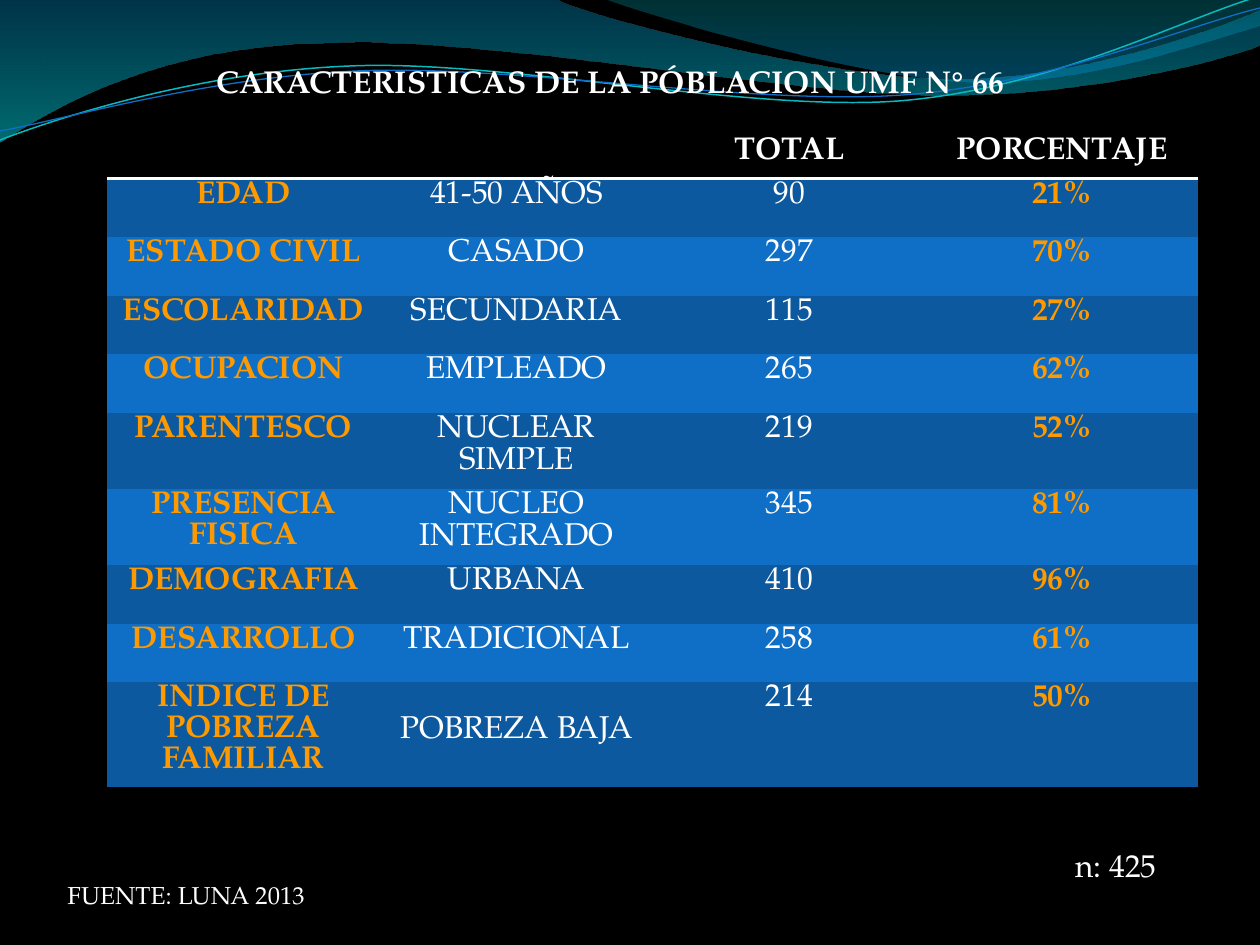
from lxml import etree
from pptx import Presentation
from pptx.dml.color import RGBColor
from pptx.enum.text import PP_ALIGN
from pptx.oxml import parse_xml
from pptx.oxml.ns import nsdecls, qn
from pptx.util import Emu, Pt

CENTER, LEFT = PP_ALIGN.CENTER, PP_ALIGN.LEFT
PX = 914400 / 126
FONT = "TeX Gyre Pagella"
NO_STYLE = "{2D5ABB26-0587-4C30-8999-92F81FD0307C}"
BLACK = RGBColor(0x00, 0x00, 0x00)
WHITE = RGBColor(0xFF, 0xFF, 0xFF)
ORANGE = RGBColor(0xFF, 0x99, 0x00)
BLUE = RGBColor(0x0F, 0x6F, 0xC6)
DARK_BLUE = RGBColor(0x0C, 0x59, 0x9F)
CYAN = RGBColor(0x0A, 0xB8, 0xBF)
OCEAN = RGBColor(0x00, 0x74, 0xA1)
AQUA = RGBColor(0x00, 0xC6, 0xCF)
TEAL = RGBColor(0x00, 0xA1, 0xA9)
AZURE = RGBColor(0x00, 0x8B, 0xBF)


def draw_wave(s, start, segments, close):
    fb = s.shapes.build_freeform(*start, PX)
    fb.add_line_segments([point for seg in segments for point in seg], close=close)
    sp = fb.convert_to_shape()
    sp.shadow.inherit = False
    lines = iter(list(sp._element.iter(qn("a:lnTo"))))
    for seg in segments:
        first = next(lines)
        if len(seg) == 3:
            first.tag = qn("a:cubicBezTo")
            for _ in range(2):
                line = next(lines)
                first.append(line[0])
                line.getparent().remove(line)
    return sp


def write(tf, text, align, fmt):
    p = tf.paragraphs[0]
    p.alignment = align
    r = p.add_run()
    r.text = text
    r.font.name = FONT
    r.font.color.rgb = fmt["color"]
    for name in ("size", "bold"):
        setattr(r.font, name, fmt[name])


prs = Presentation()
prs.slide_width, prs.slide_height = Emu(round(1260 * PX)), Emu(round(945 * PX))
s = prs.slides.add_slide(prs.slide_layouts[6])
s.background.fill.solid()
s.background.fill.fore_color.rgb = BLACK

bands = [
    ((0, 0), [
        ((554, -1),),
        ((600, 21), (837, 79), (955, 79)),
        ((1075, 79), (1207, 33), (1260, 11)),
        ((1261, 45),),
        ((1239, 55), (1096, 96), (940, 95)),
        ((784, 95), (481, 35), (324, 43)),
        ((163, 45), (58, 105), (-1, 142)),
    ], [(0, OCEAN, 45), (1, AQUA, 55)]),
    ((604, -1), [
        ((641, 14), (859, 78), (969, 82)),
        ((1079, 87), (1211, 40), (1260, 26)),
        ((1260, 0),),
    ], [(0, TEAL, 30), (0.8, AZURE, 45)]),
]
for start, segments, stops in bands:
    sp = draw_wave(s, start, segments, True)
    sp.line.fill.background()
    sp.fill.gradient()
    sp.fill.gradient_angle = 270
    for stop, (position, color, alpha) in zip(sp.fill.gradient_stops, stops):
        stop.position = position
        stop.color.rgb = color
    for clr, (_, _, alpha) in zip(sp._element.spPr.iter(qn("a:srgbClr")), stops):
        etree.SubElement(clr, qn("a:alpha")).set("val", str(alpha * 1000))

curves = [
    ((0, 140), [
        ((60, 117), (199, 72), (349, 66)),
        ((498, 59), (747, 112), (898, 101)),
        ((1050, 89), (1182, 19), (1257, -3)),
    ], CYAN, 0.85),
    ((0, 131), [
        ((59, 121), (207, 77), (357, 71)),
        ((508, 64), (752, 106), (903, 95)),
        ((1053, 84), (1186, 26), (1260, 8)),
    ], BLUE, 0.75),
]
for start, segments, color, width in curves:
    sp = draw_wave(s, start, segments, False)
    sp.fill.background()
    sp.line.color.rgb = color
    sp.line.width = Pt(width)

rows = [
    ("", "", "TOTAL", "PORCENTAJE"),
    ("EDAD", "41-50 AÑOS", "90", "21%"),
    ("ESTADO CIVIL", "CASADO", "297", "70%"),
    ("ESCOLARIDAD", "SECUNDARIA", "115", "27%"),
    ("OCUPACION", "EMPLEADO", "265", "62%"),
    ("PARENTESCO", "NUCLEAR SIMPLE", "219", "52%"),
    ("PRESENCIA FISICA", "NUCLEO INTEGRADO", "345", "81%"),
    ("DEMOGRAFIA", "URBANA", "410", "96%"),
    ("DESARROLLO", "TRADICIONAL", "258", "61%"),
    ("INDICE DE POBREZA FAMILIAR", "POBREZA BAJA", "214", "50%"),
]
heights = [44, 58, 59, 58, 59, 76, 76, 59, 58, 105]
widths = [273, 273, 273, 272]
box = (107, 135, sum(widths), sum(heights))
table = s.shapes.add_table(len(rows), len(widths), *(Emu(round(v * PX)) for v in box)).table
table.horz_banding = False
table._tbl.tblPr.find(qn("a:tableStyleId")).text = NO_STYLE
for column, width in zip(table.columns, widths):
    column.width = Emu(round(width * PX))
for i, (row, height) in enumerate(zip(rows, heights)):
    table.rows[i].height = Emu(round(height * PX))
    for j, text in enumerate(row):
        cell = table.cell(i, j)
        cell.margin_top = cell.margin_bottom = Emu(round(2 * PX))
        cell.fill.solid()
        cell.fill.fore_color.rgb = BLACK if i == 0 else DARK_BLUE if i % 2 else BLUE
        if text:
            strong = i == 0 or j in (0, 3)
            color = ORANGE if i and strong else WHITE
            write(cell.text_frame, text, CENTER, {"size": Pt(18), "bold": strong, "color": color})
        if i == 0:
            cell._tc.get_or_add_tcPr().insert(0, parse_xml(
                f'<a:lnB {nsdecls("a")} w="25400"><a:solidFill><a:srgbClr val="{WHITE}"/></a:solidFill></a:lnB>'))
table.cell(9, 1).margin_top = Emu(round(34 * PX))

labels = [
    ("CARACTERISTICAS DE LA PÓBLACION UMF N° 66", (104, 56, 1012, 50), CENTER, 18, True, True),
    ("FUENTE: LUNA 2013", (55, 874, 306, 43), LEFT, 14, False, True),
    ("n: 425", (1063, 840, 107, 50), LEFT, 18, False, False),
]
for text, box, align, size, bold, wrap in labels:
    tf = s.shapes.add_textbox(*(Emu(round(v * PX)) for v in box)).text_frame
    tf.word_wrap = wrap
    write(tf, text, align, {"size": Pt(size), "bold": bold, "color": WHITE})

prs.save("out.pptx")
